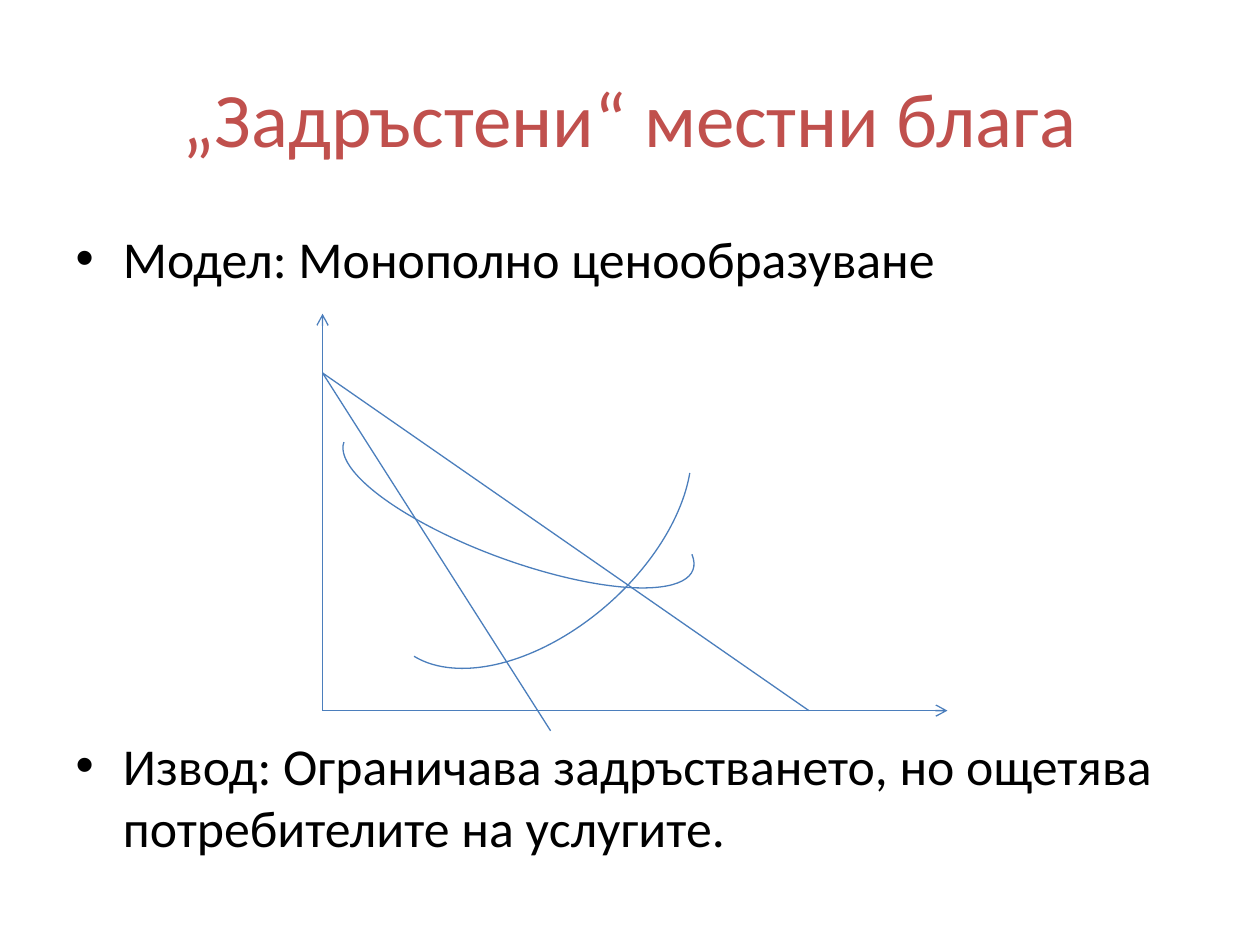
from lxml import etree
from pptx import Presentation
from pptx.dml.color import RGBColor
from pptx.enum.shapes import MSO_CONNECTOR, MSO_SHAPE
from pptx.enum.text import MSO_ANCHOR, MSO_AUTO_SIZE, PP_ALIGN
from pptx.oxml.ns import qn
from pptx.util import Inches, Pt

STRAIGHT = MSO_CONNECTOR.STRAIGHT
ARC = MSO_SHAPE.ARC
MIDDLE = MSO_ANCHOR.MIDDLE
NO_AUTOFIT = MSO_AUTO_SIZE.NONE
CENTER = PP_ALIGN.CENTER

FONT = "Calibri"
COLORS = {"title": "C0504D", "text": "000000", "line": "4B7EBC"}

TITLE = "„Задръстени“ местни блага"
BULLETS = [
    "Модел: Монополно ценообразуване",
    "Извод: Ограничава задръстването, но ощетява потребителите на услугите.",
]
GRAPH_GAP = Pt(254)

ORIGIN = (2.56, 5.64)
INTERCEPT = (2.56, 2.96)
AXES = [(ORIGIN, (7.52, 5.64)), (ORIGIN, (2.56, 2.49))]
DEMAND_LINES = [(INTERCEPT, (6.42, 5.64)), (INTERCEPT, (4.37, 5.8))]
COST_CURVES = [
    {"box": (2.8, 3.28, 2.91, 1.73), "rotation": 138.7, "degrees": (203.51, 353.63)},
    {"box": (2.64, 3.58, 2.95, 0.87), "rotation": 200.1, "degrees": (175.47, 0)},
]
ARC_UNITS_PER_DEGREE = 0.6


def style_font(font, size, color):
    font.name = FONT
    font.size = Pt(size)
    font.color.rgb = RGBColor.from_string(COLORS[color])


def style_line(line):
    line.color.rgb = RGBColor.from_string(COLORS["line"])
    line.width = Pt(0.75)


def place(shape, left, top, width, height):
    shape.left, shape.top = Inches(left), Inches(top)
    shape.width, shape.height = Inches(width), Inches(height)


def add_line(slide, start, end, arrow=False):
    connector = slide.shapes.add_connector(STRAIGHT, *map(Inches, start + end))
    style_line(connector.line)
    if arrow:
        etree.SubElement(connector.line._get_or_add_ln(), qn("a:tailEnd"), type="arrow")
    etree.SubElement(connector._element.spPr, qn("a:effectLst"))


def add_curve(slide, box, rotation, degrees):
    curve = slide.shapes.add_shape(ARC, *map(Inches, box))
    curve.rotation = rotation
    for index, angle in enumerate(degrees):
        curve.adjustments[index] = angle * ARC_UNITS_PER_DEGREE
    curve.shadow.inherit = False
    curve.fill.background()
    style_line(curve.line)


def main():
    presentation = Presentation()
    presentation.slide_width, presentation.slide_height = Inches(10), Inches(7.5)
    slide = presentation.slides.add_slide(presentation.slide_layouts[1])

    title = slide.shapes.title
    place(title, 0.5, 0.3, 9, 1.25)
    title.text_frame.text = TITLE
    title.text_frame.vertical_anchor = MIDDLE
    heading = title.text_frame.paragraphs[0]
    heading.alignment = CENTER
    style_font(heading.font, 44, "title")

    body = slide.placeholders[1]
    place(body, 0.5, 1.75, 9, 4.95)
    body.text_frame.text = "\n".join(BULLETS)
    body.text_frame.auto_size = NO_AUTOFIT
    for paragraph in body.text_frame.paragraphs:
        style_font(paragraph.font, 29.6, "text")
    body.text_frame.paragraphs[1].space_before = GRAPH_GAP

    for start, end in AXES:
        add_line(slide, start, end, arrow=True)
    for start, end in DEMAND_LINES:
        add_line(slide, start, end)
    for curve in COST_CURVES:
        add_curve(slide, **curve)

    presentation.save("out.pptx")


if __name__ == "__main__":
    main()
